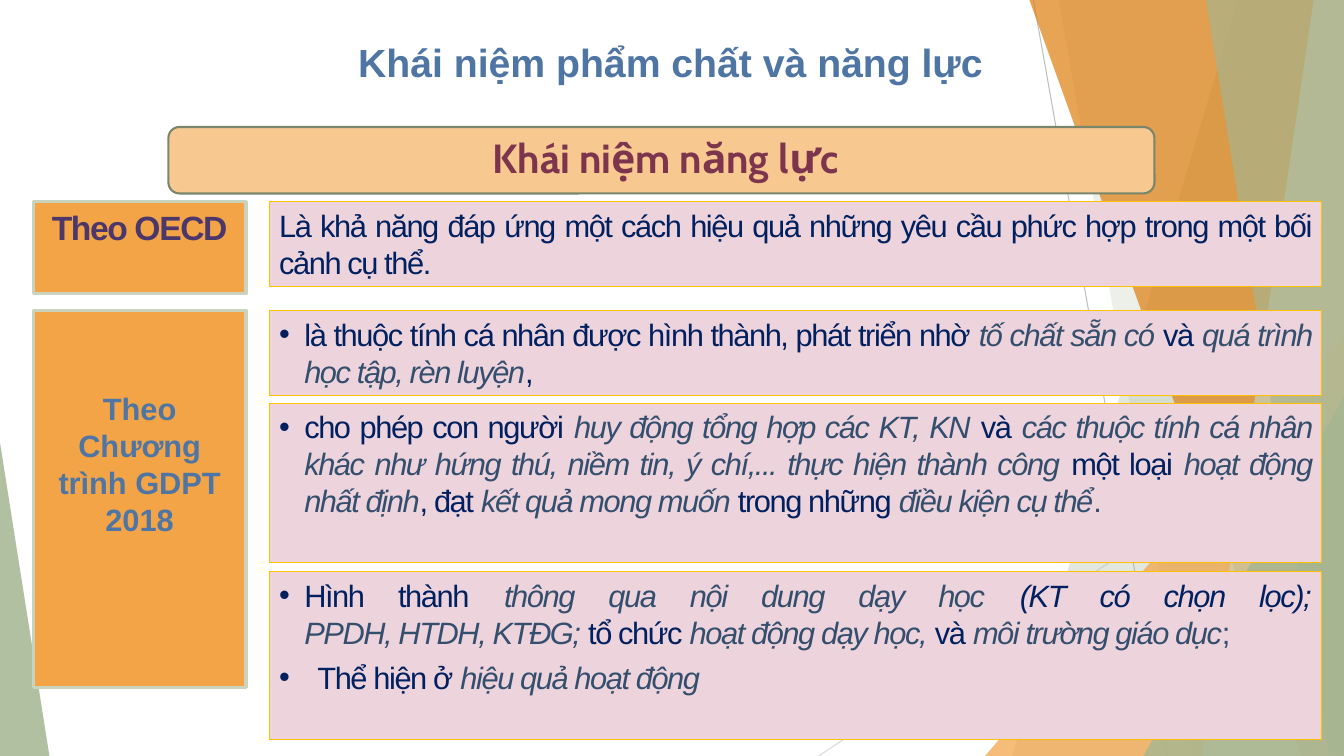
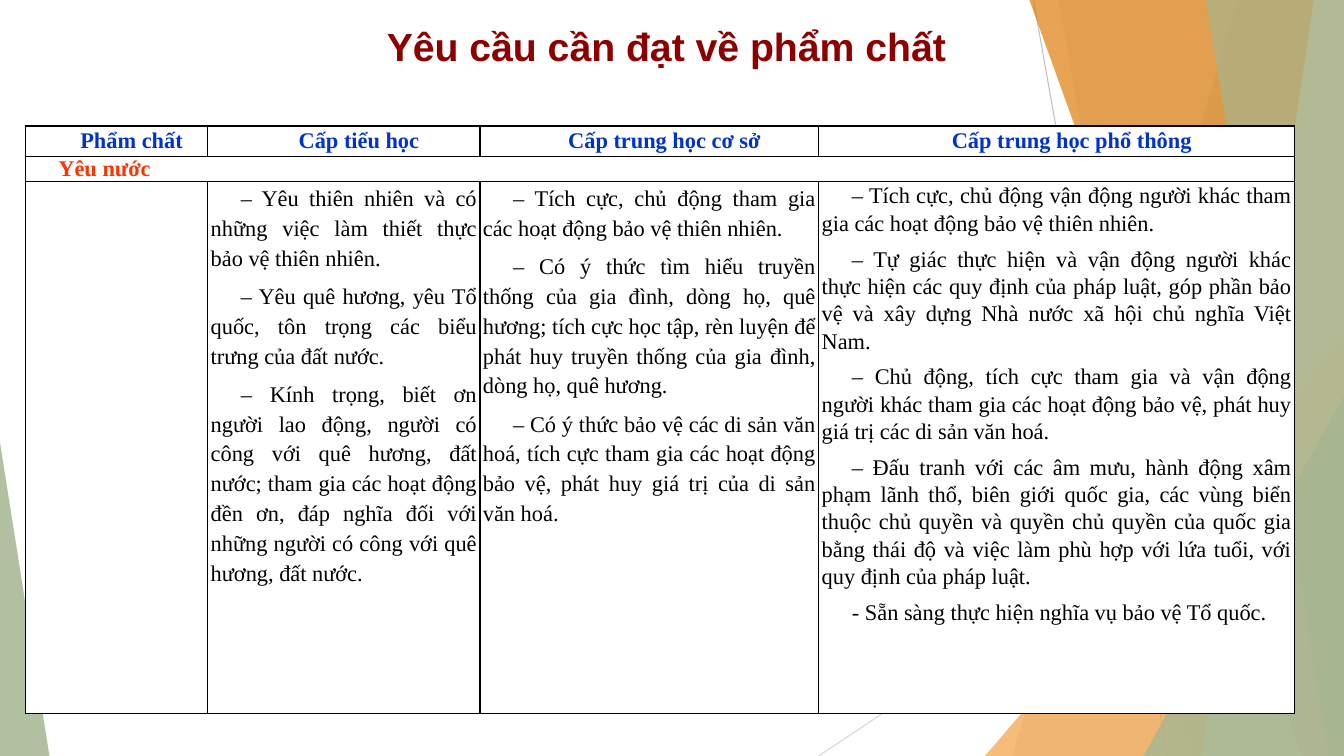
from lxml import etree
from pptx import Presentation
from pptx.dml.color import RGBColor
from pptx.enum.shapes import MSO_CONNECTOR, MSO_SHAPE
from pptx.enum.text import MSO_ANCHOR, PP_ALIGN
from pptx.oxml.ns import qn
from pptx.util import Inches, Pt

CENTER, JUSTIFY = PP_ALIGN.CENTER, PP_ALIGN.JUSTIFY
TOP, MIDDLE = MSO_ANCHOR.TOP, MSO_ANCHOR.MIDDLE
RECTANGLE, ROUNDED = MSO_SHAPE.RECTANGLE, MSO_SHAPE.ROUNDED_RECTANGLE
TRIANGLE, STRAIGHT = MSO_SHAPE.ISOSCELES_TRIANGLE, MSO_CONNECTOR.STRAIGHT

# Colours
WHITE, BLACK = RGBColor(255, 255, 255), RGBColor(0, 0, 0)
SAGE, PALE_SAGE = RGBColor(0xA5, 0xB5, 0x92), RGBColor(0xC9, 0xD3, 0xBE)
DARK_SAGE = RGBColor(0x7A, 0x86, 0x6C)
ORANGE, DEEP_ORANGE = RGBColor(0xF3, 0xA4, 0x47), RGBColor(0xDD, 0x7E, 0x0E)
PEACH, GOLD = RGBColor(0xF8, 0xC8, 0x91), RGBColor(0xFF, 0xC0, 0x00)
PINK, PLUM = RGBColor(0xEC, 0xD3, 0xDC), RGBColor(0x7C, 0x35, 0x4D)
PURPLE, DARK_RED = RGBColor(0x4C, 0x37, 0x6B), RGBColor(0x8E, 0x00, 0x00)
NAVY, SLATE = RGBColor(0x00, 0x20, 0x60), RGBColor(0x34, 0x4E, 0x6D)
STEEL, BLUE = RGBColor(0x4E, 0x75, 0xA3), RGBColor(0x00, 0x33, 0xCC)
RED = RGBColor(0xFF, 0x33, 0x00)
GRAY, LIGHT_GRAY = RGBColor(0xBF, 0xBF, 0xBF), RGBColor(0xD9, 0xD9, 0xD9)

WIDTH, HEIGHT = 13.33, 7.5

# Backdrop: lines, then panels that reach the right edge, then triangles
BACKDROP_LINES = [((10.25, 0), (11.58, HEIGHT), GRAY),
                  ((WIDTH, 4.03), (8.12, HEIGHT), LIGHT_GRAY)]
# ("panel", top x, bottom x, colour, opacity %)
# ("triangle", box, tip position, colour, opacity %)
BACKDROP_SHAPES = [
    ("panel", 12.28, 10.04, SAGE, 30),
    ("panel", 10.5, 11.82, SAGE, 20),
    ("triangle", (9.77, 3.33, 3.56, 4.17), 1, ORANGE, 72),
    ("panel", 10.21, 12.91, DEEP_ORANGE, 70),
    ("panel", 13.03, 11.92, PALE_SAGE, 70),
    ("panel", 11.96, 13.18, SAGE, 65),
    ("triangle", (11.34, 3.93, 1.99, 3.57), 1, SAGE, 80),
    ("triangle", (0, 4.39, 0.49, 3.11), 0, SAGE, 85),
]

# Text styles
TITLE = {"name": "Arial", "size": Pt(28), "bold": True}
BANNER = {"name": "Cabin", "size": Pt(29), "bold": True}
SOURCE = {"name": "Arial", "size": Pt(24), "bold": True}
PROGRAM = {"name": "Arial", "size": Pt(22), "bold": True}
BODY = {"name": "Arial", "size": Pt(22), "italic": False}
EMPHASIS = {**BODY, "italic": True}
CELL = {"name": "Times New Roman", "size": Pt(16), "bold": False}
HEADING = {**CELL, "bold": True}
TIGHT = -100

# Run kinds in the definitions: (style, colour)
RUN_KINDS = {"plain": (BODY, NAVY), "key": (EMPHASIS, SLATE),
             "aside": (EMPHASIS, NAVY), "mark": (BODY, SLATE)}

# Slide 1 content: (top, height, [(hanging indent, runs)])
DEFINITIONS = [
    (2, 0.84, [(0, [("plain", "Là khả năng đáp ứng một cách hiệu quả những yêu cầu "
                              "phức hợp trong một bối cảnh cụ thể.")])]),
    (3.08, 0.84, [(0.25, [
        ("plain", "là thuộc tính cá nhân được hình thành, phát triển nhờ "),
        ("key", "tố chất sẵn có "), ("plain", "và "),
        ("key", "quá trình học tập, rèn luyện"), ("plain", ",")])]),
    (4, 1.58, [(0.25, [
        ("plain", "cho phép con người "), ("key", "huy động tổng hợp các KT, KN "),
        ("plain", "và "),
        ("key", "các thuộc tính cá nhân khác như hứng thú, niềm tin, ý chí,... "
                "thực hiện thành công "),
        ("plain", "một loại "), ("key", "hoạt động nhất định"), ("plain", ", đạt "),
        ("key", "kết quả mong muốn "), ("plain", "trong những "),
        ("key", "điều kiện cụ thể"), ("mark", ".")])]),
    (5.67, 1.67, [
        (0.25, [
            ("plain", "Hình thành "), ("key", "thông qua nội dung dạy học "),
            ("aside", "(KT có chọn lọc);\n"), ("key", "PPDH, HTDH, KTĐG; "),
            ("plain", "tổ chức "), ("key", "hoạt động dạy học, "), ("plain", "và "),
            ("key", "môi trường giáo dục"), ("mark", ";")]),
        (0.38, [("plain", "Thể hiện ở "), ("key", "hiệu quả hoạt động")])]),
]
# (text, top, height, top inset, style, colour, letter spacing)
LABELS = [
    ("Theo Chương trình GDPT 2018", 3.08, 3.74, 0.79, PROGRAM, STEEL, 0),
    ("Theo OECD", 2, 0.91, 0.05, SOURCE, PURPLE, TIGHT),
]

# Slide 2 content: (heading, column width, line spacing, requirements)
LEVELS = [
    ("Phẩm chất", 1.81, 1, []),
    ("Cấp tiểu học", 2.7, 1.2, [
        "– Yêu thiên nhiên và có những việc làm thiết thực bảo vệ thiên nhiên.",
        "– Yêu quê hương, yêu Tổ quốc, tôn trọng các biểu trưng của đất nước.",
        "– Kính trọng, biết ơn người lao động, người có công với quê hương, đất nước; "
        "tham gia các hoạt động đền ơn, đáp nghĩa đối với những người có công với "
        "quê hương, đất nước."]),
    ("Cấp trung học cơ sở", 3.36, 1.2, [
        "– Tích cực, chủ động tham gia các hoạt động bảo vệ thiên nhiên.",
        "– Có ý thức tìm hiểu truyền thống của gia đình, dòng họ, quê hương; tích cực "
        "học tập, rèn luyện để phát huy truyền thống của gia đình, dòng họ, quê hương.",
        "– Có ý thức bảo vệ các di sản văn hoá, tích cực tham gia các hoạt động bảo vệ, "
        "phát huy giá trị của di sản văn hoá."]),
    ("Cấp trung học phổ thông", 4.72, 1.1, [
        "– Tích cực, chủ động vận động người khác tham gia các hoạt động bảo vệ "
        "thiên nhiên.",
        "– Tự giác thực hiện và vận động người khác thực hiện các quy định của pháp "
        "luật, góp phần bảo vệ và xây dựng Nhà nước xã hội chủ nghĩa Việt Nam.",
        "– Chủ động, tích cực tham gia và vận động người khác tham gia các hoạt động "
        "bảo vệ, phát huy giá trị các di sản văn hoá.",
        "– Đấu tranh với các âm mưu, hành động xâm phạm lãnh thổ, biên giới quốc gia, "
        "các vùng biển thuộc chủ quyền và quyền chủ quyền của quốc gia bằng thái độ và "
        "việc làm phù hợp với lứa tuổi, với quy định của pháp luật.",
        "- Sẵn sàng thực hiện nghĩa vụ bảo vệ Tổ quốc."]),
]
QUALITY = "Yêu nước"
ROW_HEIGHTS = [0.3, 0.25, 5.28]


def box(left, top, width, height):
    return [Inches(value) for value in (left, top, width, height)]


def set_all(target, values):
    for name, value in values.items():
        setattr(target, name, value)


def add_run(paragraph, text, style, color, spacing=0):
    run = paragraph.add_run()
    run.text = text.rstrip("\n")
    set_all(run.font, style)
    run.font.color.rgb = color
    if spacing:
        run.font._element.set("spc", str(spacing))
    if text.endswith("\n"):
        paragraph.add_line_break()


def set_indent(paragraph, left, first_line, bullet=None):
    properties = paragraph._p.get_or_add_pPr()
    properties.set("marL", str(Inches(left)))
    properties.set("indent", str(Inches(first_line)))
    if bullet:
        etree.SubElement(properties, qn("a:buFont"), typeface="Arial")
        etree.SubElement(properties, qn("a:buChar"), char=bullet)


def paragraphs_for(frame, items):
    """Pair each item with a paragraph, reusing the first one of the frame."""
    for index, item in enumerate(items):
        yield (frame.add_paragraph() if index else frame.paragraphs[0]), item


def paint(shape, color, opacity=100, line=None, line_width=0):
    shape.shadow.inherit = False
    shape.fill.solid()
    shape.fill.fore_color.rgb = color
    if opacity < 100:
        color_element = shape.element.spPr.xpath("./a:solidFill/a:srgbClr")[0]
        etree.SubElement(color_element, qn("a:alpha"), val=str(opacity * 1000))
    if line is None:
        shape.line.fill.background()
    else:
        shape.line.color.rgb = line
        shape.line.width = Pt(line_width)


def add_box(slide, kind, area, color, line, line_width, **frame_values):
    shape = slide.shapes.add_shape(kind, *box(*area))
    paint(shape, color, line=line, line_width=line_width)
    set_all(shape.text_frame, {"word_wrap": True, "vertical_anchor": TOP, **frame_values})
    return shape.text_frame


def add_backdrop(slide):
    for start, end, color in BACKDROP_LINES:
        line = slide.shapes.add_connector(STRAIGHT, *box(*start, *end))
        line.line.color.rgb = color
        line.line.width = Pt(0.75)
        etree.SubElement(line.element.spPr, qn("a:effectLst"))
    for kind, *geometry, color, opacity in BACKDROP_SHAPES:
        if kind == "panel":
            top_x, bottom_x = geometry
            corners = [(WIDTH, 0), (WIDTH, HEIGHT), (bottom_x, HEIGHT)]
            builder = slide.shapes.build_freeform(Inches(top_x), 0)
            builder.add_line_segments([(Inches(x), Inches(y)) for x, y in corners])
            shape = builder.convert_to_shape()
        else:
            area, tip = geometry
            shape = slide.shapes.add_shape(TRIANGLE, *box(*area))
            shape.adjustments[0] = tip
        paint(shape, color, opacity)


def add_title(slide, text, area, color):
    frame = slide.shapes.add_textbox(*box(*area)).text_frame
    frame.word_wrap = True
    paragraph = frame.paragraphs[0]
    paragraph.alignment = CENTER
    add_run(paragraph, text, TITLE, color)


def build_definitions(slide):
    # Banner
    frame = add_box(slide, ROUNDED, (1.67, 1.26, 9.78, 0.66), PEACH, DARK_SAGE, 1.5,
                    vertical_anchor=MIDDLE, margin_left=Inches(0.18))
    paragraph = frame.paragraphs[0]
    set_all(paragraph, {"alignment": CENTER, "line_spacing": 0.9, "space_before": Pt(10)})
    add_run(paragraph, "Khái niệm năng lực", BANNER, PLUM)
    add_title(slide, "Khái niệm phẩm chất và năng lực", (-0.04, 0.33, 13.38, 0.57), STEEL)

    # Source labels
    for text, top, height, inset, style, color, spacing in LABELS:
        frame = add_box(slide, RECTANGLE, (0.33, top, 2.11, height), ORANGE, PALE_SAGE,
                        2.25, margin_top=Inches(inset))
        frame.paragraphs[0].alignment = CENTER
        add_run(frame.paragraphs[0], text, style, color, spacing)

    # Definition boxes
    for top, height, items in DEFINITIONS:
        frame = add_box(slide, RECTANGLE, (2.67, top, 10.44, height), PINK, GOLD, 0.75)
        for paragraph, (hanging, runs) in paragraphs_for(frame, items):
            set_all(paragraph, {"alignment": JUSTIFY, "space_after": Pt(6)})
            if hanging:
                set_indent(paragraph, hanging, -hanging, "•")
            for kind, text in runs:
                add_run(paragraph, text, *RUN_KINDS[kind], TIGHT)


def format_cell(cell):
    properties = cell._tc.get_or_add_tcPr()
    for side in ("a:lnL", "a:lnR", "a:lnT", "a:lnB"):
        border = etree.SubElement(properties, qn(side), w=str(Pt(1)))
        fill = etree.SubElement(border, qn("a:solidFill"))
        etree.SubElement(fill, qn("a:srgbClr"), val=str(BLACK))
    cell.fill.solid()
    cell.fill.fore_color.rgb = WHITE
    set_all(cell, {"margin_left": Inches(0.03), "margin_right": Inches(0.03),
                   "margin_top": 0, "margin_bottom": 0})


def fill_cell(cell, texts, style, color, **paragraph_values):
    for paragraph, text in paragraphs_for(cell.text_frame, texts):
        set_all(paragraph, paragraph_values)
        set_indent(paragraph, 0, 0.3)
        add_run(paragraph, text, style, color)


def build_requirements(slide):
    # Table grid
    area = box(0.25, 1.25, sum(level[1] for level in LEVELS), sum(ROW_HEIGHTS))
    table = slide.shapes.add_table(len(ROW_HEIGHTS), len(LEVELS), *area).table
    set_all(table, {"first_row": False, "horz_banding": False})
    for row, height in zip(table.rows, ROW_HEIGHTS):
        row.height = Inches(height)
    for cell in table.iter_cells():
        format_cell(cell)

    # Headings and requirements
    for index, (heading, width, spacing, requirements) in enumerate(LEVELS):
        table.columns[index].width = Inches(width)
        head = table.cell(0, index)
        head.vertical_anchor = MIDDLE
        fill_cell(head, [heading], HEADING, BLUE, alignment=CENTER)
        fill_cell(table.cell(2, index), requirements, CELL, BLACK, alignment=JUSTIFY,
                  line_spacing=spacing, space_before=Pt(6))
    table.cell(1, 0).merge(table.cell(1, len(LEVELS) - 1))
    fill_cell(table.cell(1, 0), [QUALITY], HEADING, RED, alignment=JUSTIFY)
    add_title(slide, "Yêu cầu cần đạt về phẩm chất", (1.11, 0.17, 11, 0.57), DARK_RED)


def main():
    presentation = Presentation()
    presentation.slide_width, presentation.slide_height = Inches(WIDTH), Inches(HEIGHT)
    for build in (build_definitions, build_requirements):
        slide = presentation.slides.add_slide(presentation.slide_layouts[6])
        add_backdrop(slide)
        build(slide)
    presentation.save("out.pptx")


if __name__ == "__main__":
    main()
